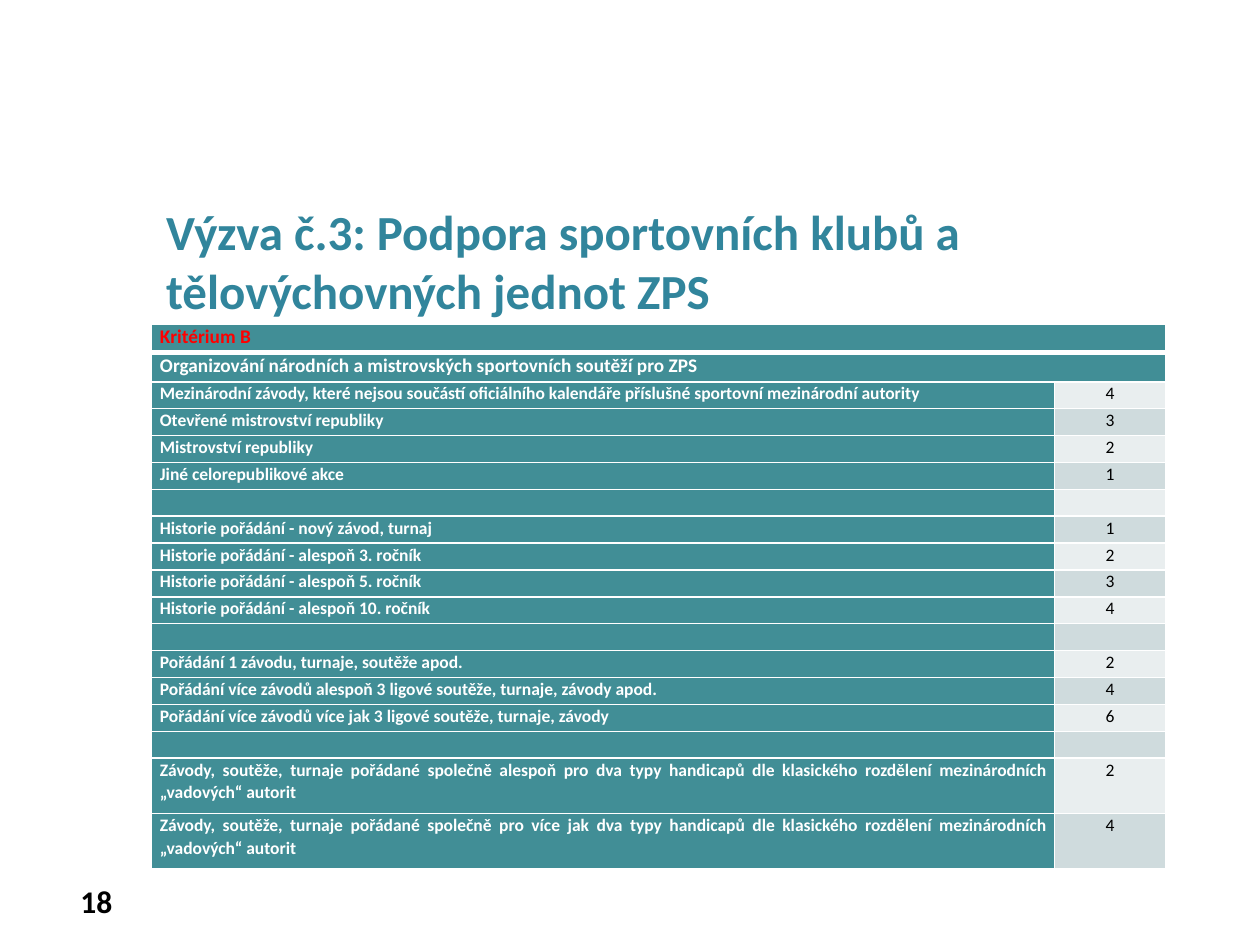
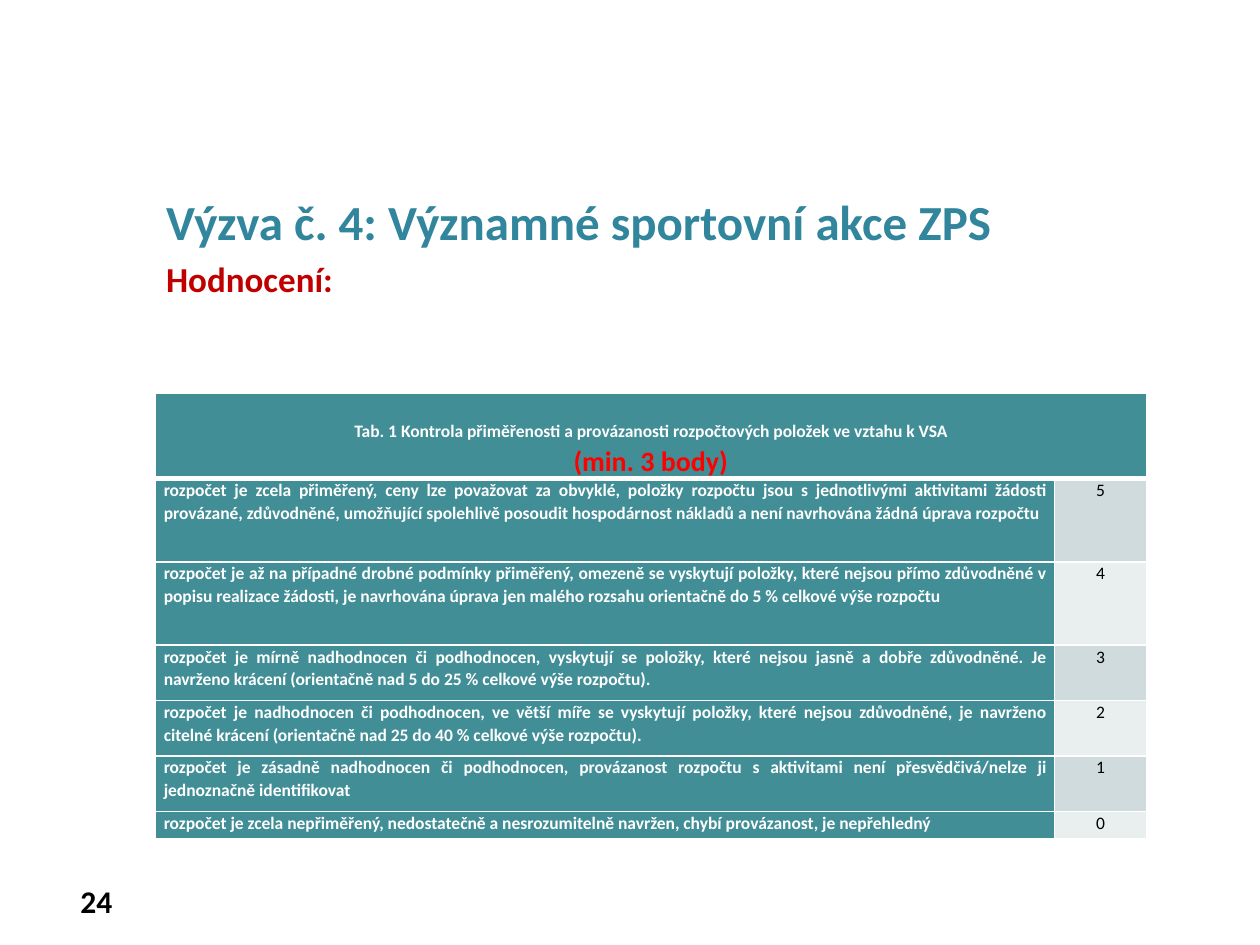
from lxml import etree
from pptx import Presentation
from pptx.dml.color import RGBColor
from pptx.enum.text import MSO_ANCHOR, PP_ALIGN
from pptx.oxml.ns import qn
from pptx.util import Inches, Pt

TOP, MIDDLE, BOTTOM = MSO_ANCHOR.TOP, MSO_ANCHOR.MIDDLE, MSO_ANCHOR.BOTTOM
LEFT, CENTER, RIGHT, JUSTIFY = (
    PP_ALIGN.LEFT, PP_ALIGN.CENTER, PP_ALIGN.RIGHT, PP_ALIGN.JUSTIFY)

WHITE = RGBColor(0xFF, 0xFF, 0xFF)
BLACK = RGBColor(0x00, 0x00, 0x00)
BLUE = RGBColor(0x31, 0x85, 0x9C)
TEAL = RGBColor(0x41, 0x8E, 0x96)
LIGHT_BAND = RGBColor(0xE9, 0xEE, 0xEF)
DARK_BAND = RGBColor(0xCF, 0xDB, 0xDD)
RED = RGBColor(0xFF, 0x00, 0x00)
DARK_RED = RGBColor(0xC0, 0x00, 0x00)

TITLE = {"size": Pt(28), "color": BLUE}
SUBTITLE = {"size": Pt(20), "color": DARK_RED}
PAGE_NUMBER = {"size": Pt(18), "color": BLACK}
CRITERION = {"size": Pt(11), "color": RED}
TOPIC = {"size": Pt(11), "color": WHITE}
LABEL = {"size": Pt(10), "color": WHITE}
SCORE = {"size": Pt(10), "color": BLACK, "bold": False}
MINIMUM = {"size": Pt(16), "color": RED}

CLUB_HEADINGS = [
    ([("Kritérium B", CRITERION)], LEFT),
    ([("Organizování národních a mistrovských sportovních soutěží pro ZPS", TOPIC)],
     JUSTIFY),
]
CLUB_CRITERIA = [
    ("Mezinárodní závody, které nejsou součástí oficiálního kalendáře příslušné "
     "sportovní mezinárodní autority", "4"),
    ("Otevřené mistrovství republiky", "3"),
    ("Mistrovství republiky", "2"),
    ("Jiné celorepublikové akce", "1"),
    ("", ""),
    ("Historie pořádání - nový závod, turnaj", "1"),
    ("Historie pořádání - alespoň 3. ročník", "2"),
    ("Historie pořádání - alespoň 5. ročník", "3"),
    ("Historie pořádání - alespoň 10. ročník", "4"),
    ("", ""),
    ("Pořádání 1 závodu, turnaje, soutěže apod.", "2"),
    ("Pořádání více závodů alespoň 3 ligové soutěže, turnaje, závody apod.", "4"),
    ("Pořádání více závodů více jak 3 ligové soutěže, turnaje, závody", "6"),
    ("", ""),
    ("Závody, soutěže, turnaje pořádané společně alespoň pro dva typy handicapů dle "
     "klasického rozdělení mezinárodních „vadových“ autorit", "2"),
    ("Závody, soutěže, turnaje pořádané společně pro více jak dva typy handicapů dle "
     "klasického rozdělení mezinárodních „vadových“ autorit", "4"),
]
BUDGET_HEADINGS = [
    ([("Tab. 1 Kontrola přiměřenosti a provázanosti rozpočtových položek "
       "ve vztahu k VSA", LABEL), ("(min. 3 body)", MINIMUM)], CENTER),
]
BUDGET_CRITERIA = [
    ("rozpočet je zcela přiměřený, ceny lze považovat za obvyklé, položky rozpočtu jsou "
     "s jednotlivými aktivitami žádosti provázané, zdůvodněné, umožňující spolehlivě "
     "posoudit hospodárnost nákladů a není navrhována žádná úprava rozpočtu", "5"),
    ("rozpočet je až na případné drobné podmínky přiměřený, omezeně se vyskytují "
     "položky, které nejsou přímo zdůvodněné v popisu realizace žádosti, je navrhována "
     "úprava jen malého rozsahu orientačně do 5 % celkové výše rozpočtu", "4"),
    ("rozpočet je mírně nadhodnocen či podhodnocen, vyskytují se položky, které nejsou "
     "jasně a dobře zdůvodněné. Je navrženo krácení (orientačně nad 5 do 25 % celkové "
     "výše rozpočtu).", "3"),
    ("rozpočet je nadhodnocen či podhodnocen, ve větší míře se vyskytují položky, které "
     "nejsou zdůvodněné, je navrženo citelné krácení (orientačně nad 25 do 40 % celkové "
     "výše rozpočtu).", "2"),
    ("rozpočet je zásadně nadhodnocen či podhodnocen, provázanost rozpočtu s aktivitami "
     "není přesvědčivá/nelze ji jednoznačně identifikovat", "1"),
    ("rozpočet je zcela nepřiměřený, nedostatečně a nesrozumitelně navržen, chybí "
     "provázanost, je nepřehledný", "0"),
]


def apply(target, values):
    for name, value in values.items():
        setattr(target, name, value)


def write(frame, lines, align=LEFT, **spacing):
    for index, (text, style) in enumerate(lines):
        para = frame.add_paragraph() if index else frame.paragraphs[0]
        apply(para, {"alignment": align, **spacing})
        if index and not spacing:
            para.space_before = int(style["size"] * 0.2)
        if not text:
            etree.SubElement(para._p, qn("a:endParaRPr"),
                             sz=str(int(style["size"].pt * 100)))
            continue
        span = para.add_run()
        span.text = text
        font = {"name": "Calibri", "bold": True, **style}
        span.font.color.rgb = font.pop("color")
        apply(span.font, font)


def add_text(page, position, lines, align=LEFT, anchor=TOP):
    box = page.shapes.add_textbox(*map(Inches, position))
    apply(box.text_frame, {"word_wrap": True, "vertical_anchor": anchor})
    write(box.text_frame, lines, align)


def set_borders(cell, widths):
    properties = cell._tc.get_or_add_tcPr()
    for side, width in widths.items():
        line = etree.SubElement(properties, qn(f"a:ln{side}"), w=str(Pt(width)))
        fill = etree.SubElement(line, qn("a:solidFill"))
        etree.SubElement(fill, qn("a:srgbClr"), val=str(WHITE))


def fill_cell(cell, row, color, lines, align, anchor=TOP):
    set_borders(cell, {"L": 1, "R": 1, "T": 3 if row == 1 else 1,
                       "B": 3 if row == 0 else 1})
    cell.fill.solid()
    cell.fill.fore_color.rgb = color
    apply(cell, {"margin_left": Inches(0.07), "margin_right": Inches(0.07),
                 "margin_top": 0, "margin_bottom": 0, "vertical_anchor": anchor})
    write(cell.text_frame, lines, align, line_spacing=1.07)


def add_criteria(page, left, top, widths, heights, headings, criteria):
    frame = page.shapes.add_table(
        len(heights), len(widths), Inches(left), Inches(top),
        Inches(sum(widths)), Inches(sum(heights)))
    table = frame.table
    apply(table, {"first_row": False, "horz_banding": False})
    for column, width in zip(table.columns, widths):
        column.width = Inches(width)
    for row, height in zip(table.rows, heights):
        row.height = Inches(height)
    for row, (lines, align) in enumerate(headings):
        heading, covered = table.cell(row, 0), table.cell(row, 1)
        heading.merge(covered)
        fill_cell(heading, row, TEAL, lines, align, BOTTOM if len(lines) > 1 else TOP)
        fill_cell(covered, row, TEAL, [("", LABEL)], align)
    for row, (label, score) in enumerate(criteria, len(headings)):
        band = DARK_BAND if row % 2 else LIGHT_BAND
        fill_cell(table.cell(row, 0), row, TEAL, [(label, LABEL)], JUSTIFY)
        fill_cell(table.cell(row, 1), row, band, [(score, SCORE)], CENTER)


def add_page(deck, number, top, titles):
    page = deck.slides.add_slide(deck.slide_layouts[6])
    add_text(page, (0.28, 6.95, 0.71, 0.4), [(number, PAGE_NUMBER)], RIGHT, MIDDLE)
    add_text(page, (1.22, top, 8.28, 7.22 - top), titles)
    return page


def main():
    deck = Presentation()
    apply(deck, {"slide_width": Inches(10), "slide_height": Inches(7.5)})

    page = add_page(deck, "18", 1.55, [
        ("Výzva č.3: Podpora sportovních klubů a tělovýchovných jednot ZPS", TITLE)])
    heading_rows, tall_rows = [0.23] * 2, [0.44] * 2
    line_height = (4.33 - sum(heading_rows + tall_rows)) / 14
    add_criteria(page, 1.2, 2.57, (7.17, 0.88),
                 heading_rows + [line_height] * 14 + tall_rows,
                 CLUB_HEADINGS, CLUB_CRITERIA)

    page = add_page(deck, "24", 1.47, [
        ("Výzva č. 4: Významné sportovní akce ZPS", TITLE), ("Hodnocení:", SUBTITLE)])
    add_criteria(page, 1.23, 3.12, (7.14, 0.73),
                 [0.68] + [0.66] * 2 + [0.44] * 3 + [0.22],
                 BUDGET_HEADINGS, BUDGET_CRITERIA)

    deck.save("out.pptx")


if __name__ == "__main__":
    main()
